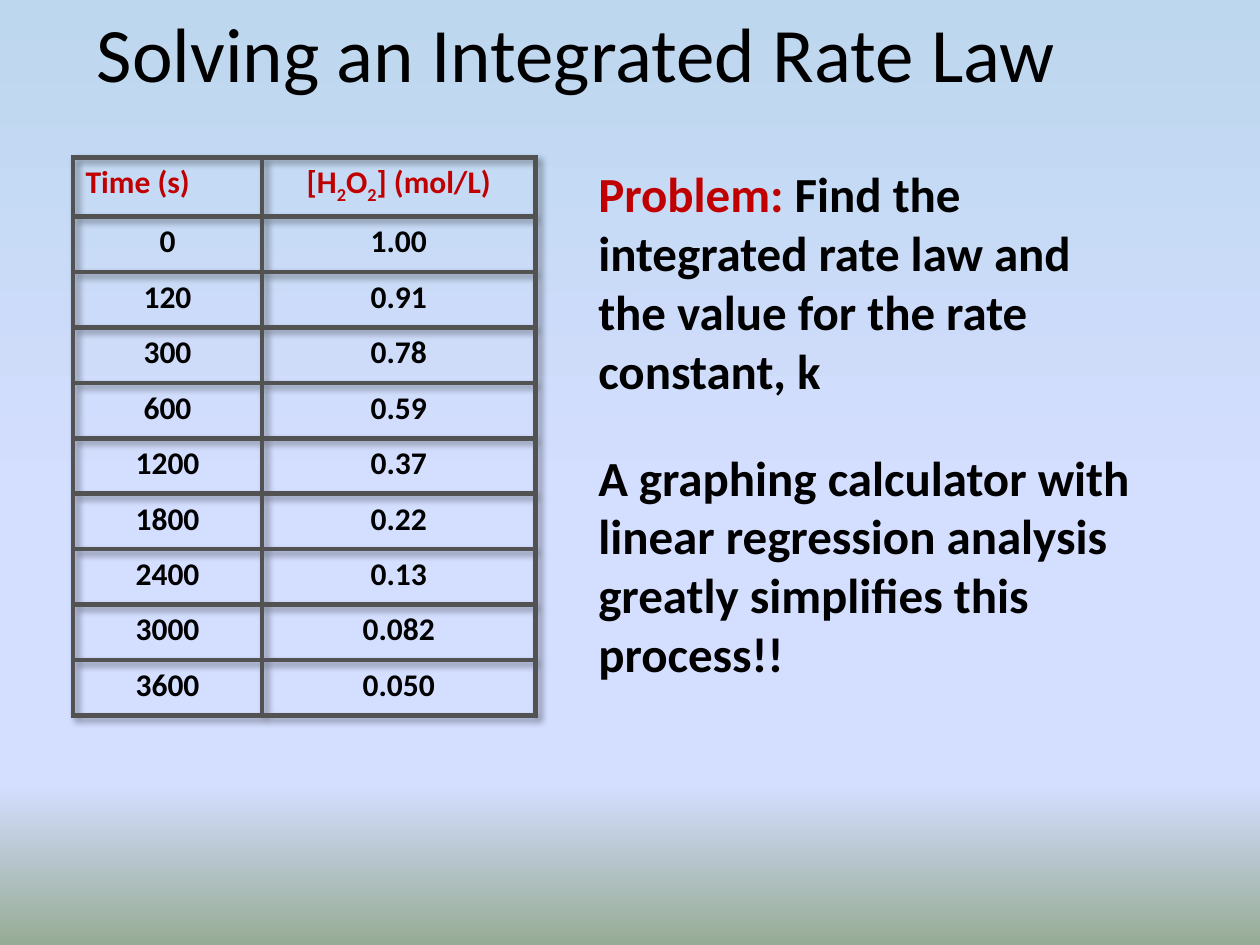
from dataclasses import dataclass
from lxml.etree import SubElement as Sub
from pptx import Presentation
from pptx.dml.color import RGBColor as RGB
from pptx.enum.text import MSO_ANCHOR as Anchor, PP_ALIGN as Align
from pptx.oxml import parse_xml
from pptx.oxml.ns import nsdecls, qn
from pptx.util import Inches, Pt


@dataclass(frozen=True)
class Theme:
    face: str = "Calibri"
    ink: str = "000000"
    red: str = "C00000"
    rule: str = "525252"
    sky: tuple = ((0, "BDD7EE"), (53, "D4DEFF"), (83, "D4DEFF"), (100, "96AB94"))
    title: int = 44
    body: int = 28
    grid: int = 18


theme = Theme()


def style(run, size, color, bold=True):
    font = run.font
    font.name, font.size, font.bold = theme.face, Pt(size), bold
    font.color.rgb = RGB.from_string(color)


def add_text(slide, place, parts, size, bold=True):
    box = slide.shapes.add_textbox(*map(Inches, place))
    box.text_frame.word_wrap = True
    para = box.text_frame.paragraphs[0]
    for text, color in parts:
        run = para.add_run()
        run.text = text
        style(run, size, color, bold)
    return box.text_frame


deck = Presentation()
deck.slide_width, deck.slide_height = Inches(10), Inches(7.5)
slide = deck.slides.add_slide(deck.slide_layouts[6])

fill = slide.background.fill
fill.gradient()
fill.gradient_angle = 270
stops = slide.element.find(".//" + qn("a:gsLst"))
stops.clear()
for pos, color in theme.sky:
    stop = Sub(stops, qn("a:gs"), pos=str(pos * 1000))
    Sub(stop, qn("a:srgbClr"), val=color)

title = add_text(slide, (0.67, 0, 8.58, 0.92),
                 [("Solving an Integrated Rate Law", theme.ink)], theme.title, False)
title.vertical_anchor = Anchor.MIDDLE
title.paragraphs[0].line_spacing = 0.9

rows = [
    (["Time (s)"], ["[H", "2", "O", "2", "] (mol/L)"]),
    (["0"], ["1.00"]),
    (["120"], ["0.91"]),
    (["300"], ["0.78"]),
    (["600"], ["0.59"]),
    (["1200"], ["0.37"]),
    (["1800"], ["0.22"]),
    (["2400"], ["0.13"]),
    (["3000"], ["0.082"]),
    (["3600"], ["0.050"]),
]
frame = slide.shapes.add_table(len(rows), 2, Inches(0.58), Inches(1.25),
                               Inches(3.67), Inches(4.47))
table = frame.table
table.first_row = table.horz_banding = False
table.columns[0].width, table.columns[1].width = Inches(1.5), Inches(2.17)
table._tbl.tblPr.insert(0, parse_xml(
    f'<a:effectLst {nsdecls("a")}><a:outerShdw blurRad="50800" dist="38100" dir="2700000">'
    '<a:srgbClr val="000000"><a:alpha val="40000"/></a:srgbClr></a:outerShdw></a:effectLst>'))

for r, row in enumerate(rows):
    table.rows[r].height = Inches(0.44 if r else 0.47)
    for c, parts in enumerate(row):
        cell = table.cell(r, c)
        para = cell.text_frame.paragraphs[0]
        para.alignment = Align.CENTER if r or c else Align.LEFT
        space = Sub(para._p.get_or_add_pPr(), qn("a:spcBef"))
        Sub(space, qn("a:spcPct"), val="20000")
        for i, text in enumerate(parts):
            run = para.add_run()
            run.text = text
            style(run, theme.grid, theme.ink if r else theme.red)
            if i % 2:
                run._r.get_or_add_rPr().set("baseline", "-25000")
        props = cell._tc.get_or_add_tcPr()
        for side in ("lnL", "lnR", "lnT", "lnB"):
            line = Sub(props, qn("a:" + side), w=str(Pt(3)))
            Sub(Sub(line, qn("a:solidFill")), qn("a:srgbClr"), val=theme.rule)
        cell.fill.background()

add_text(slide, (4.65, 1.25, 4.52, 1.97), [
    ("Problem: ", theme.red),
    ("Find the integrated rate law and the value for the rate constant, k", theme.ink),
], theme.body)
add_text(slide, (4.65, 3.5, 4.77, 1.97), [
    ("A graphing calculator with linear regression analysis "
     "greatly simplifies this process!!", theme.ink),
], theme.body)

deck.save("out.pptx")
